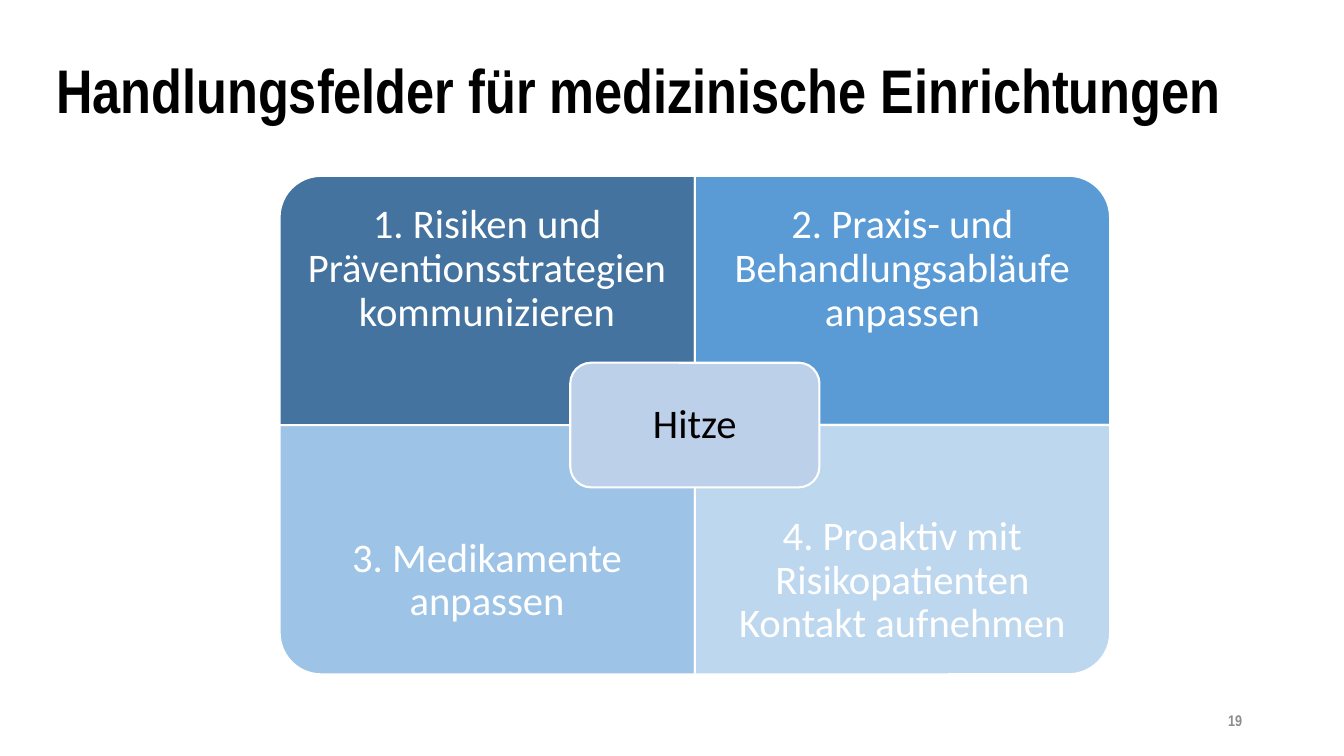
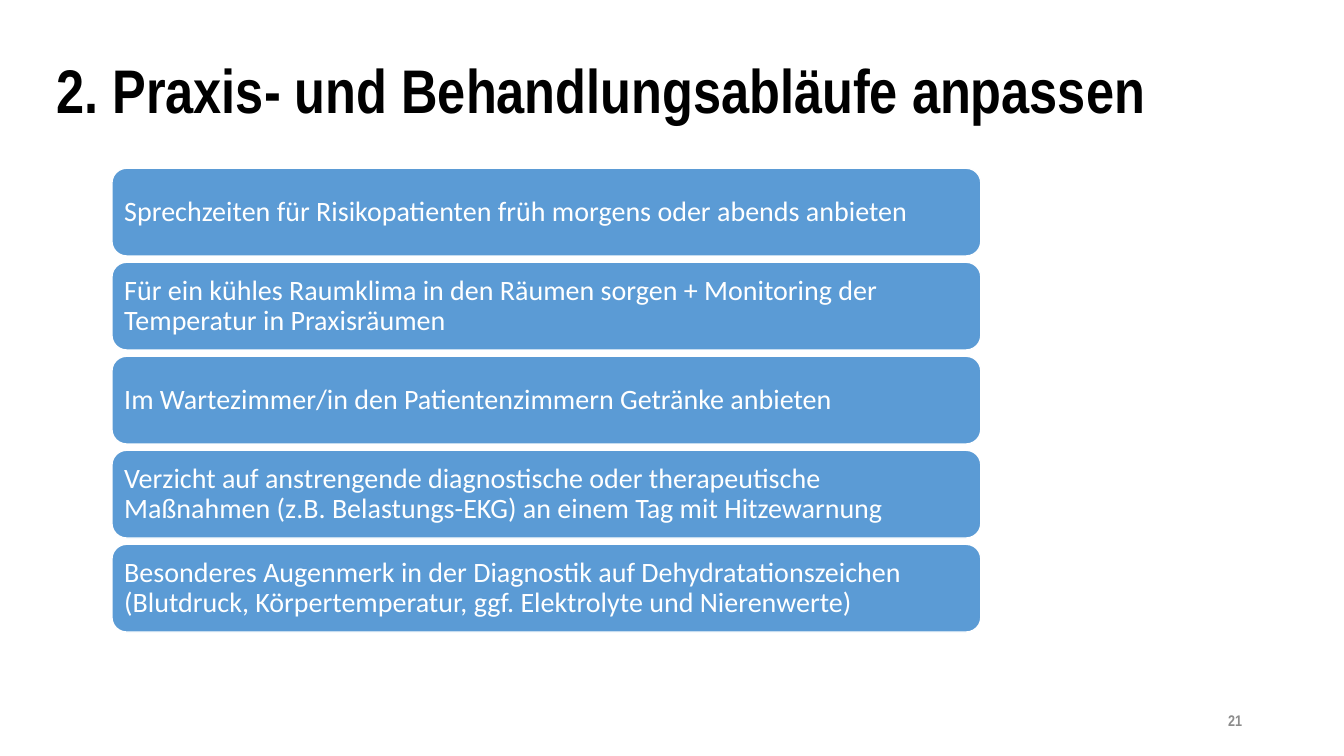
import pptx
import pptx.util
import pptx.dml.color
import pptx.enum.shapes
import pptx.enum.text

WIDE, HIGH = 13.33, 7.5
HEAD, BODY = "Arial Narrow", "Calibri"
BLACK, WHITE, GRAY = "000000", "FFFFFF", "8C8C8C"
BLUE, NAVY, SKY, ICE, HAZE = "5B9BD5", "43739E", "9DC3E6", "BDD7EE", "BDD0E9"

TITLE = (3.45, 7.33, 96.5, 9.2)
PAGE = (70.67, 92.67, 22.5, 5.33)
MATRIX = (20.8, 23.25, 61.8, 65.95)
STACK = (8.33, 22.25, 64.65, 61.35)

KIND = pptx.enum.shapes.MSO_SHAPE
ALIGN = pptx.enum.text.PP_ALIGN
ANCHOR = pptx.enum.text.MSO_ANCHOR

FIELDS = [
    ("1. Risiken und Präventionsstrategien kommunizieren", NAVY, 270),
    ("2. Praxis- und Behandlungsabläufe anpassen", BLUE, 0),
    ("3. Medikamente anpassen", SKY, 180),
    ("4. Proaktiv mit Risikopatienten Kontakt aufnehmen", ICE, 90),
]
STEPS = [
    "Sprechzeiten für Risikopatienten früh morgens oder abends anbieten",
    "Für ein kühles Raumklima in den Räumen sorgen + Monitoring der Temperatur in Praxisräumen",
    "Im Wartezimmer/in den Patientenzimmern Getränke anbieten",
    "Verzicht auf anstrengende diagnostische oder therapeutische Maßnahmen (z.B. Belastungs-EKG) an einem Tag mit Hitzewarnung",
    "Besonderes Augenmerk in der Diagnostik auf Dehydratationszeichen (Blutdruck, Körpertemperatur, ggf. Elektrolyte und Nierenwerte)",
]


def color(code):
    return pptx.dml.color.RGBColor.from_string(code)


def inches(box):
    sides = (WIDE, HIGH, WIDE, HIGH)
    return [pptx.util.Inches(part * side / 100) for part, side in zip(box, sides)]


def inner(box, left, top, width, height):
    x, y, w, h = box
    return x + w * left, y + h * top, w * width, h * height


def write(shape, text, size=29, font=BODY, tint=WHITE, bold=False,
          align=ALIGN.CENTER, anchor=ANCHOR.MIDDLE, pad=None, lead=0.9):
    frame = shape.text_frame
    frame.word_wrap = True
    frame.vertical_anchor = anchor
    if pad is not None:
        inset = pptx.util.Inches(pad)
        frame.margin_left = frame.margin_right = inset
        frame.margin_top = frame.margin_bottom = inset
    line = frame.paragraphs[0]
    line.alignment = align
    line.line_spacing = lead
    run = line.add_run()
    run.text = text
    run.font.name = font
    run.font.size = pptx.util.Pt(size)
    run.font.bold = bold
    run.font.color.rgb = color(tint)


def label(slide, box, text, **form):
    write(slide.shapes.add_textbox(*inches(box)), text, **form)


def panel(slide, box, kind, fill, edge=1.5, turn=0):
    x, y, w, h = inches(box)
    if turn % 180:
        x, y, w, h = x + (w - h) // 2, y + (h - w) // 2, h, w
    shape = slide.shapes.add_shape(kind, x, y, w, h)
    shape.shadow.inherit = False
    shape.rotation = turn
    shape.fill.solid()
    shape.fill.fore_color.rgb = color(fill)
    shape.line.color.rgb = color(WHITE)
    shape.line.width = pptx.util.Pt(edge)
    return shape


def matrix(slide, box, fields, core):
    for index, (text, fill, turn) in enumerate(fields):
        row, col = divmod(index, 2)
        cell = inner(box, col / 2, row / 2, 1 / 2, 1 / 2)
        panel(slide, cell, KIND.ROUND_1_RECTANGLE, fill, turn=turn)
        label(slide, inner(cell, 0, row / 4, 1, 3 / 4), text, pad=0.23)
    hub = panel(slide, inner(box, 0.35, 0.375, 0.3, 0.25), KIND.ROUNDED_RECTANGLE, HAZE)
    write(hub, core, tint=BLACK, pad=0.12)


def stack(slide, box, steps, ratio=14):
    unit = 1 / (len(steps) * (ratio + 1) - 1)
    for index, text in enumerate(steps):
        cell = inner(box, 0, index * (ratio + 1) * unit, 1, ratio * unit)
        bar = panel(slide, cell, KIND.ROUNDED_RECTANGLE, BLUE, edge=1)
        write(bar, text, size=20, align=ALIGN.LEFT, pad=0.08)


def page(deck, title, number):
    slide = deck.slides.add_slide(deck.slide_layouts[6])
    label(slide, PAGE, str(number), size=11, font=HEAD, tint=GRAY, bold=True,
          align=ALIGN.RIGHT, lead=1.0)
    label(slide, TITLE, title, size=44, font=HEAD, tint=BLACK, bold=True,
          align=ALIGN.LEFT, anchor=ANCHOR.TOP)
    return slide


def main():
    deck = pptx.Presentation()
    deck.slide_width = pptx.util.Inches(WIDE)
    deck.slide_height = pptx.util.Inches(HIGH)
    matrix(page(deck, "Handlungsfelder für medizinische Einrichtungen", 19),
           MATRIX, FIELDS, "Hitze")
    stack(page(deck, "2. Praxis- und Behandlungsabläufe anpassen", 21), STACK, STEPS)
    deck.save("out.pptx")


if __name__ == "__main__":
    main()
